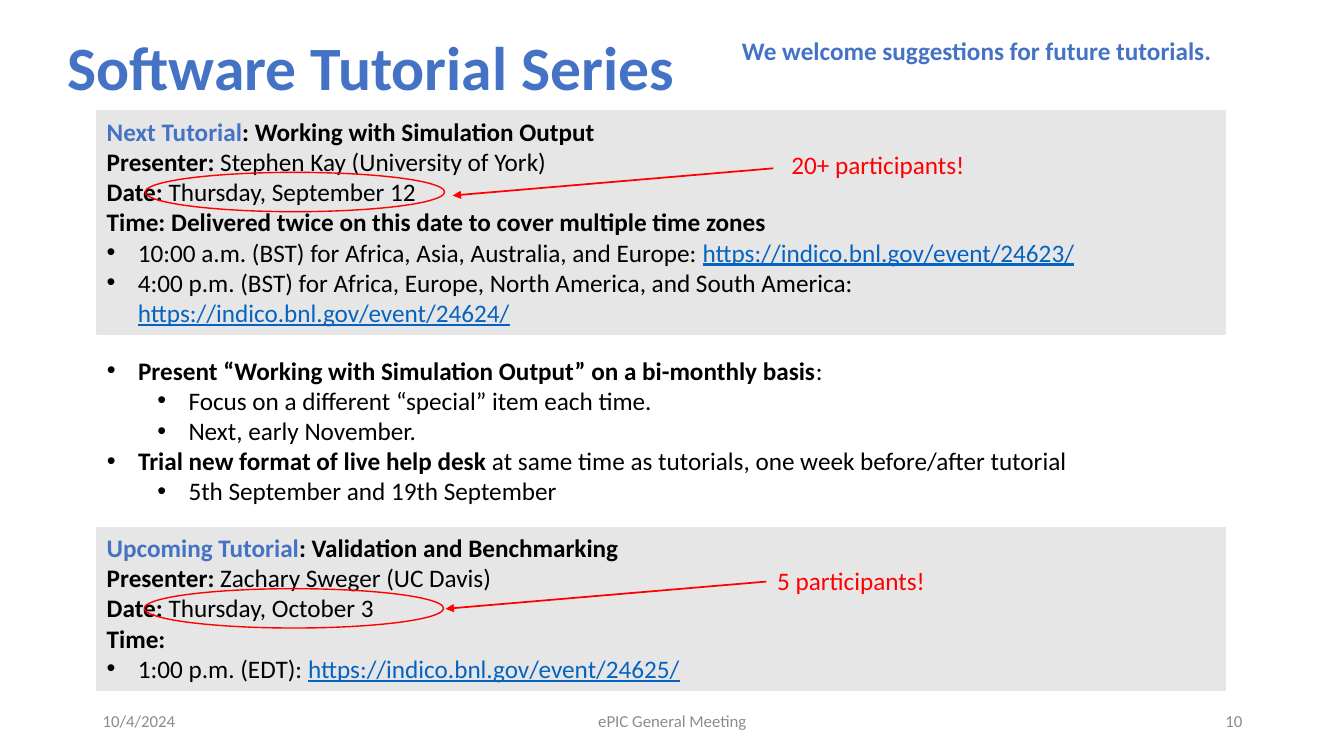
from lxml.etree import SubElement
from pptx import Presentation
from pptx.dml.color import RGBColor
from pptx.enum.shapes import MSO_CONNECTOR, MSO_SHAPE
from pptx.enum.text import MSO_ANCHOR, MSO_AUTO_SIZE, PP_ALIGN
from pptx.oxml.ns import qn
from pptx.util import Pt

PX = 9144
BLUE, BLACK, RED, GRAY = "4472C4", "000000", "FF0000", "8C8C8C"
PANEL, LINK = "E7E6E6", "0563C1"
BOX_LEFT, BOX_WIDTH = 96, 1119
INDENT, LEVEL_STEP = 31, 50

PLAIN = {"color": BLACK}
BOLD = {"color": BLACK, "bold": True}
ACCENT = {"color": BLUE, "bold": True}
URL = {"color": LINK, "underline": True}

NEXT_HEADING = [
    [("Next Tutorial", ACCENT), (": Working with Simulation Output", BOLD)],
    [("Presenter:", BOLD), ("\u00a0Stephen Kay (University of York)", PLAIN)],
    [("Date:", BOLD), ("\u00a0Thursday, September 12", PLAIN)],
    [("Time: Delivered twice on this date to cover multiple time zones", BOLD)],
]
NEXT_SESSIONS = [
    (0, [("10:00 a.m. (BST) for Africa, Asia, Australia, and Europe: ", PLAIN),
         ("https://indico.bnl.gov/event/24623/", URL)]),
    (0, [("4:00 p.m. (BST) for Africa, Europe, North America, and South America: ", PLAIN),
         ("https://indico.bnl.gov/event/24624/", URL)]),
]
PLANS = [
    (0, [("Present “Working with Simulation Output” on a bi-monthly basis", BOLD), (":", PLAIN)]),
    (1, [("Focus on a different “special” item each time.", PLAIN)]),
    (1, [("Next, early November.", PLAIN)]),
    (0, [("Trial new format of live help desk ", BOLD),
         ("at same time as tutorials, one week before/after tutorial", PLAIN)]),
    (1, [("5th September and 19th September", PLAIN)]),
]
UPCOMING_HEADING = [
    [("Upcoming Tutorial", ACCENT), (": Validation and Benchmarking", BOLD)],
    [("Presenter:", BOLD), ("\u00a0Zachary Sweger (UC Davis)", PLAIN)],
    [("Date:", BOLD), ("\u00a0Thursday, October 3", PLAIN)],
    [("Time:", BOLD)],
]
UPCOMING_SESSIONS = [
    (0, [("1:00 p.m. (EDT): ", PLAIN), ("https://indico.bnl.gov/event/24625/", URL)]),
]


def rgb(color):
    """Turn a hex string into a colour."""
    return RGBColor.from_string(color)


def scaled(*lengths):
    """Turn px lengths into EMU."""
    return [length * PX for length in lengths]


def place(shape, left, top, width, height):
    """Move and size a shape in px."""
    shape.left, shape.top, shape.width, shape.height = scaled(left, top, width, height)


def style_run(run, color, size=18, bold=False, underline=False):
    """Format one run of text."""
    run.font.name, run.font.size = "Calibri", Pt(size)
    run.font.bold, run.font.underline = bold, underline
    run.font.color.rgb = rgb(color)


def add_runs(paragraph, parts):
    """Append styled runs to a paragraph."""
    for text, style in parts:
        run = paragraph.add_run()
        run.text = text
        style_run(run, **style)


def add_heading(paragraph, lines):
    """Fill a paragraph with lines parted by line breaks."""
    paragraph.alignment = PP_ALIGN.LEFT
    for index, parts in enumerate(lines):
        if index:
            paragraph.add_line_break()
        add_runs(paragraph, parts)


def add_bullet(paragraph, level, parts):
    """Fill a paragraph as a bulleted item."""
    properties = paragraph._p.get_or_add_pPr()
    properties.set("marL", str((INDENT + level * LEVEL_STEP) * PX))
    properties.set("indent", str(-INDENT * PX))
    bullet_color = SubElement(properties, qn("a:buClr"))
    SubElement(bullet_color, qn("a:srgbClr"), val=BLACK)
    SubElement(properties, qn("a:buFont"), typeface="Arial")
    SubElement(properties, qn("a:buChar"), char="•")
    paragraph.level = level
    paragraph.alignment = PP_ALIGN.LEFT
    paragraph.space_before = Pt(0)
    add_runs(paragraph, parts)


def add_panel(slide, top, height, heading, sessions):
    """Add a gray tutorial panel."""
    panel = slide.shapes.add_shape(MSO_SHAPE.RECTANGLE, *scaled(BOX_LEFT, top, BOX_WIDTH, height))
    panel.shadow.inherit = False
    panel.fill.solid()
    panel.fill.fore_color.rgb = rgb(PANEL)
    panel.line.color.rgb = rgb(PANEL)
    panel.line.width = Pt(0.75)
    frame = panel.text_frame
    frame.word_wrap = True
    frame.vertical_anchor = MSO_ANCHOR.TOP
    add_heading(frame.paragraphs[0], heading)
    for level, parts in sessions:
        add_bullet(frame.add_paragraph(), level, parts)


def add_label(slide, box, text, color, size=18, bold=False,
              align=PP_ALIGN.LEFT, anchor=MSO_ANCHOR.TOP):
    """Add a one-line text box."""
    frame = slide.shapes.add_textbox(*scaled(*box)).text_frame
    frame.word_wrap = True
    frame.vertical_anchor = anchor
    frame.text = text
    frame.paragraphs[0].alignment = align
    style_run(frame.paragraphs[0].runs[0], color, size, bold)


def add_callout(slide, ellipse, arrow, label, text):
    """Ring a date and point at it from a red label."""
    ring = slide.shapes.add_shape(MSO_SHAPE.OVAL, *scaled(*ellipse))
    ring.shadow.inherit = False
    ring.fill.background()
    ring.line.color.rgb = rgb(RED)
    ring.line.width = Pt(1)
    connector = slide.shapes.add_connector(MSO_CONNECTOR.STRAIGHT, *scaled(*arrow))
    connector.line.color.rgb = rgb(RED)
    connector.line.width = Pt(1.25)
    SubElement(connector.line._get_or_add_ln(), qn("a:tailEnd"), type="triangle")
    SubElement(connector._element.spPr, qn("a:effectLst"))
    add_label(slide, label, text, RED)


def fill_title(title):
    """Set the slide title."""
    place(title, 57, 30, 1150, 80)
    frame = title.text_frame
    frame.text = "Software Tutorial Series"
    frame.auto_size = MSO_AUTO_SIZE.NONE
    frame.vertical_anchor = MSO_ANCHOR.MIDDLE
    paragraph = frame.paragraphs[0]
    paragraph.alignment = PP_ALIGN.LEFT
    paragraph.line_spacing = 0.9
    style_run(paragraph.runs[0], BLUE, 44, True)


def fill_plans(body):
    """Set the list of plans."""
    place(body, BOX_LEFT, 347, BOX_WIDTH, 162)
    frame = body.text_frame
    frame.auto_size = MSO_AUTO_SIZE.NONE
    for index, (level, parts) in enumerate(PLANS):
        paragraph = frame.add_paragraph() if index else frame.paragraphs[0]
        add_bullet(paragraph, level, parts)


def main():
    """Build and save the slide."""
    presentation = Presentation()
    presentation.slide_width, presentation.slide_height = scaled(1333, 750)
    slide = presentation.slides.add_slide(presentation.slide_layouts[1])
    fill_title(slide.shapes.title)
    for left, width, text, align in [
        (92, 300, "10/4/2024", PP_ALIGN.LEFT),
        (442, 450, "ePIC General Meeting", PP_ALIGN.CENTER),
        (942, 300, "10", PP_ALIGN.RIGHT),
    ]:
        add_label(slide, (left, 695, width, 40), text, GRAY, 12,
                  align=align, anchor=MSO_ANCHOR.MIDDLE)
    add_panel(slide, 110, 222, NEXT_HEADING, NEXT_SESSIONS)
    fill_plans(slide.placeholders[1])
    add_panel(slide, 523, 162, UPCOMING_HEADING, UPCOMING_SESSIONS)
    add_label(slide, (726, 30, 488, 40), "We welcome suggestions for future tutorials.",
              BLUE, bold=True)
    add_callout(slide, (144, 171, 297, 39), (767, 167, 449, 194),
                (775, 143, 213, 40), "20+ participants!")
    add_callout(slide, (143, 584, 297, 39), (760, 577, 442, 604),
                (761, 556, 213, 40), "5 participants!")
    presentation.save("out.pptx")


if __name__ == "__main__":
    main()
